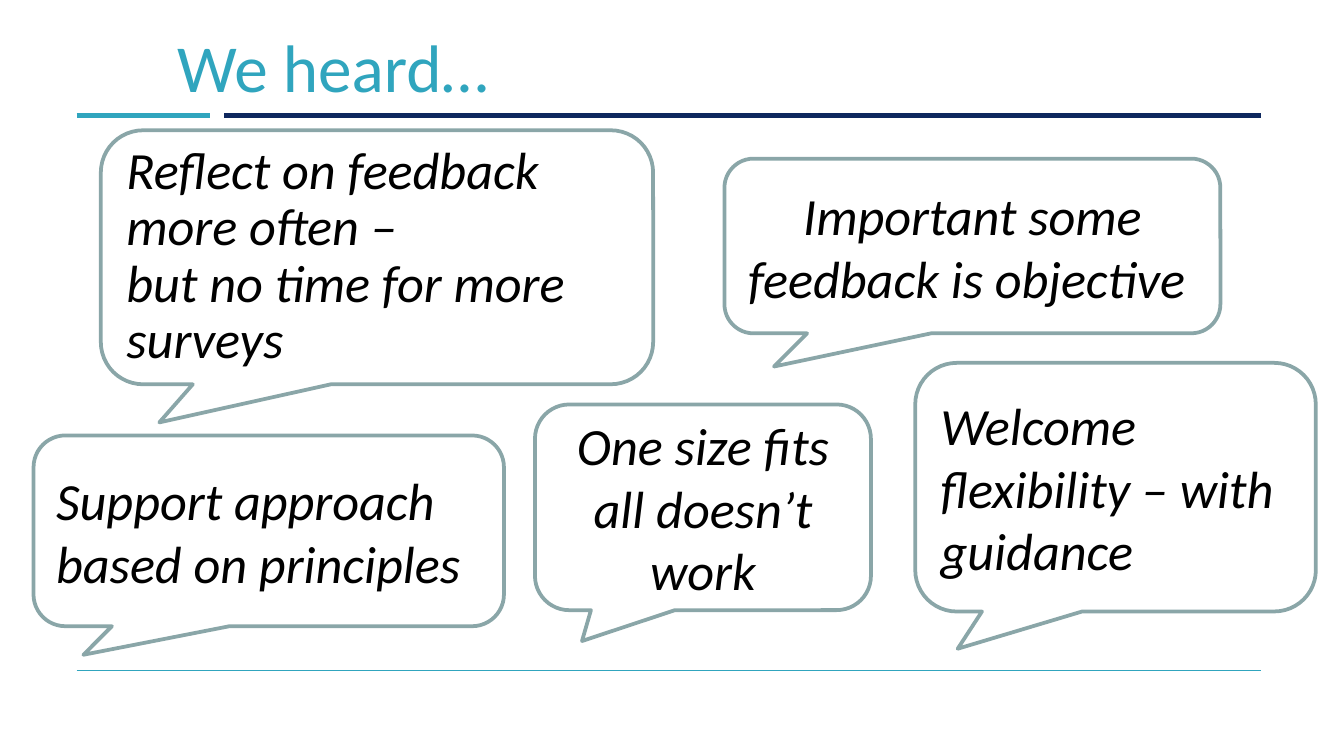
from dataclasses import dataclass

from lxml.etree import SubElement
from pptx import Presentation
from pptx.dml.color import RGBColor
from pptx.enum.shapes import MSO_CONNECTOR, MSO_SHAPE
from pptx.enum.text import MSO_ANCHOR, PP_ALIGN
from pptx.oxml.ns import qn
from pptx.util import Pt

TEAL = "30A5BE"
NAVY = "0E285E"
SAGE = "8AA6A8"
BLACK = "000000"


@dataclass
class Rule:
    start: float
    end: float
    top: float
    color: str
    weight: float


@dataclass
class Quote:
    left: float
    top: float
    width: float
    height: float
    lines: list[str]
    tail: tuple[float, float] = (-0.394, 0.65)
    align: PP_ALIGN = PP_ALIGN.LEFT
    spacing: float = 1.0


def rgb(color: str) -> RGBColor:
    return RGBColor.from_string(color)


def write(shape, lines: list[str], *, size: float, color: str, italic: bool = False,
          align: PP_ALIGN = PP_ALIGN.LEFT, spacing: float = 1.0) -> None:
    frame = shape.text_frame
    frame.word_wrap = True
    frame.vertical_anchor = MSO_ANCHOR.MIDDLE
    for index, line in enumerate(lines):
        para = frame.add_paragraph() if index else frame.paragraphs[0]
        para.alignment = align
        para.line_spacing = spacing
        span = para.add_run()
        span.text = line
        span.font.name = "Calibri"
        span.font.size = Pt(size)
        span.font.italic = italic
        span.font.color.rgb = rgb(color)


def draw_rule(page, rule: Rule) -> None:
    line = page.shapes.add_connector(
        MSO_CONNECTOR.STRAIGHT, Pt(rule.start), Pt(rule.top), Pt(rule.end), Pt(rule.top))
    line.line.color.rgb = rgb(rule.color)
    line.line.width = Pt(rule.weight)
    SubElement(line._element.spPr, qn("a:effectLst"))


def draw_quote(page, quote: Quote) -> None:
    bubble = page.shapes.add_shape(
        MSO_SHAPE.ROUNDED_RECTANGULAR_CALLOUT,
        Pt(quote.left), Pt(quote.top), Pt(quote.width), Pt(quote.height))
    bubble.adjustments[0], bubble.adjustments[1] = quote.tail
    bubble.shadow.inherit = False
    bubble.fill.background()
    bubble.line.color.rgb = rgb(SAGE)
    bubble.line.width = Pt(2)
    write(bubble, quote.lines, size=28, color=BLACK, italic=True,
          align=quote.align, spacing=quote.spacing)


RULES = [
    Rule(120.2, 675.4, 61.9, NAVY, 3),
    Rule(41, 112.3, 61.9, TEAL, 3),
    Rule(41, 675.4, 359.3, TEAL, 0.75),
]

# The four-line quote is set tighter so that it stays inside its bubble
QUOTES = [
    Quote(286.6, 216.7, 180, 110.2, ["One size fits all doesn’t work"],
          tail=(-0.36, 0.65), align=PP_ALIGN.CENTER),
    Quote(490.3, 194.4, 214.6, 133.2, ["Welcome flexibility – with guidance"]),
    Quote(388.1, 85, 265.7, 93.6, ["Important some feedback is objective "],
          tail=(-0.4, 0.69), align=PP_ALIGN.CENTER),
    Quote(54, 69.8, 295.9, 136.1,
          ["Reflect on feedback more often –", "but no time for more surveys"],
          spacing=0.9),
    Quote(18, 233.3, 252, 102.2, ["Support approach based on principles"]),
]


def main() -> None:
    deck = Presentation()
    deck.slide_width, deck.slide_height = Pt(720), Pt(405)
    page = deck.slides.add_slide(deck.slide_layouts[6])

    # Header and footer rules
    for rule in RULES:
        draw_rule(page, rule)

    # Title
    title = page.shapes.add_textbox(Pt(87.8), Pt(15.1), Pt(563.8), Pt(39.6))
    write(title, ["We heard…"], size=36, color=TEAL)

    # Speech bubbles
    for quote in QUOTES:
        draw_quote(page, quote)

    deck.save("out.pptx")


if __name__ == "__main__":
    main()
